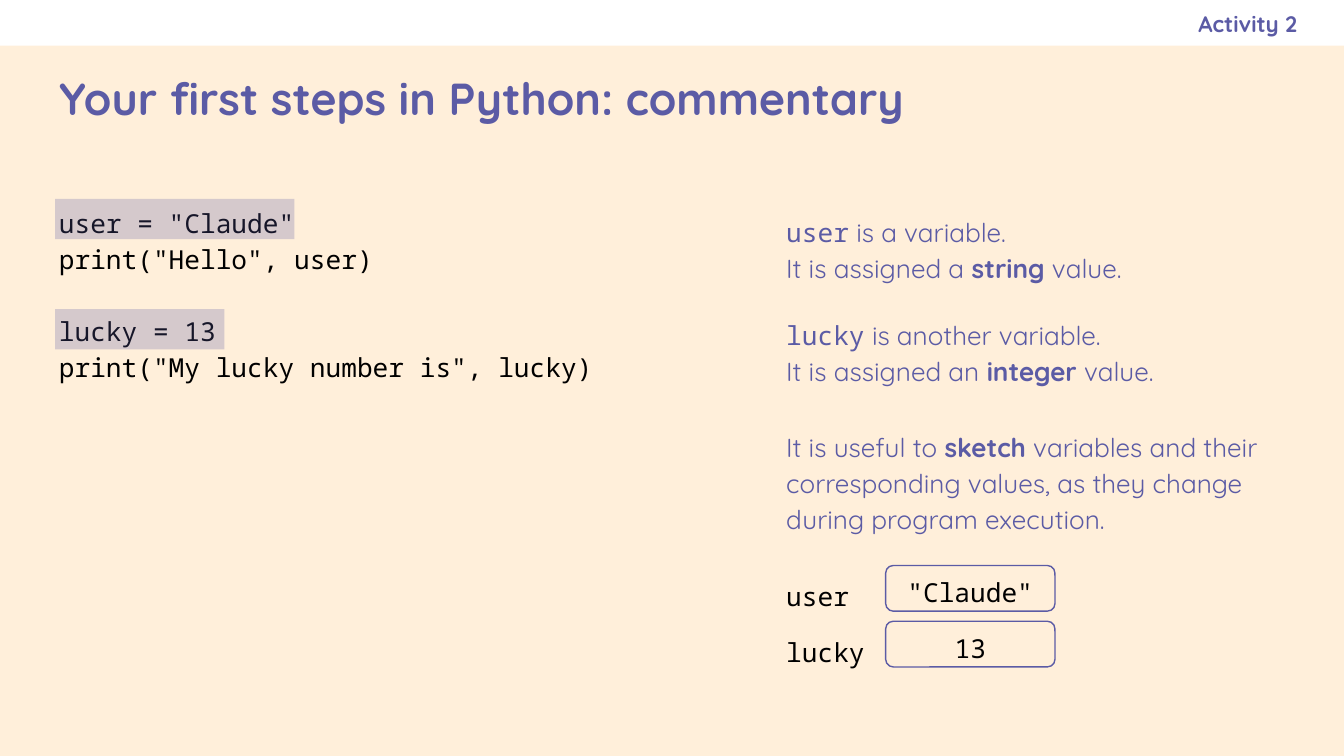
from lxml import etree
from pptx import Presentation
from pptx.dml.color import RGBColor
from pptx.enum.shapes import MSO_SHAPE as Shape
from pptx.enum.text import MSO_ANCHOR as Anchor, MSO_AUTO_SIZE as AutoSize, PP_ALIGN as Align
from pptx.oxml.ns import qn
from pptx.util import Inches, Pt

CREAM = RGBColor(0xFF, 0xEF, 0xDA)
WHITE = RGBColor(0xFF, 0xFF, 0xFF)
VIOLET = RGBColor(0x5B, 0x5B, 0xA5)
BLACK = RGBColor(0, 0, 0)
SANS = "Quicksand"
MONO = "Noto Sans Mono"
COLUMNS, ROWS = 100, 56.25
LEFT_CODE = 3.4
LEFT_NOTES = 57.52
NOTES_WIDTH = 39
BAND_HEIGHT = 3.4


class LessonSlide:
    """Places elements given in grid columns and rows as (left, top, width, height)."""

    def __init__(self, presentation):
        self.column = presentation.slide_width / COLUMNS
        self.row = presentation.slide_height / ROWS
        self.slide = presentation.slides.add_slide(presentation.slide_layouts[5])
        self.slide.background.fill.solid()
        self.slide.background.fill.fore_color.rgb = CREAM

    def place(self, box):
        left, top, width, height = box
        return (round(left * self.column), round(top * self.row),
                round(width * self.column), round(height * self.row))

    def set_frame(self, shape, anchor=Anchor.TOP, insets=(0.1, 0.1, 0.1, 0.1)):
        frame = shape.text_frame
        frame.word_wrap = True
        frame.auto_size = AutoSize.NONE
        frame.vertical_anchor = anchor
        (frame.margin_left, frame.margin_top,
         frame.margin_right, frame.margin_bottom) = map(Inches, insets)
        return frame

    def style(self, paragraph, font=SANS, size=14, color=VIOLET, bold=False,
              align=Align.LEFT, spacing=1.0):
        paragraph.alignment = align
        paragraph.line_spacing = spacing
        for run in paragraph.runs:
            run.font.name = font
            run.font.size = Pt(size)
            run.font.bold = bold
            run.font.color.rgb = color

    def title(self, text, box):
        shape = self.slide.shapes.title
        shape.left, shape.top, shape.width, shape.height = self.place(box)
        frame = self.set_frame(shape, Anchor.MIDDLE)
        frame.text = text
        self.style(frame.paragraphs[0], size=24, bold=True)

    def rectangle(self, box, color, opacity=None):
        shape = self.slide.shapes.add_shape(Shape.RECTANGLE, *self.place(box))
        shape.shadow.inherit = False
        shape.fill.solid()
        shape.fill.fore_color.rgb = color
        shape.line.fill.background()
        if opacity is not None:
            fill_color = shape.fill._xPr.find(qn("a:solidFill"))[0]
            etree.SubElement(fill_color, qn("a:alpha"), val=str(opacity * 1000))

    def label(self, text, box):
        shape = self.slide.shapes.add_textbox(*self.place(box))
        frame = self.set_frame(shape, Anchor.MIDDLE, (0.1, 0.1, 0, 0.1))
        frame.text = text
        self.style(frame.paragraphs[0], size=12, bold=True, align=Align.RIGHT)

    def code(self, blocks, box, gap=19.3):
        """Writes blocks of code lines, with one line of space between blocks."""
        frame = self.set_frame(self.slide.shapes.add_textbox(*self.place(box)))
        frame.text = "\n".join(line for block in blocks for line in block)
        for paragraph in frame.paragraphs:
            self.style(paragraph, MONO, color=BLACK, spacing=1.15)
            if paragraph.text in [block[0] for block in blocks[1:]]:
                paragraph.space_before = Pt(gap)

    def note(self, lines, box):
        """Writes lines of (text, kind) pairs, where kind is plain, bold or code."""
        shape = self.slide.shapes.add_textbox(*self.place(box))
        frame = self.set_frame(shape, insets=(0.1, 0.1, 0.06, 0.1))
        for index, pieces in enumerate(lines):
            paragraph = frame.add_paragraph() if index else frame.paragraphs[0]
            for text, _ in pieces:
                paragraph.add_run().text = text
            self.style(paragraph, spacing=1.14)
            for run, (_, kind) in zip(paragraph.runs, pieces):
                run.font.bold = kind == "bold"
                run.font.name = MONO if kind == "code" else SANS

    def variable(self, name, value, top):
        """Sketches a variable as its name beside a box with its value."""
        shapes = self.slide.shapes.add_group_shape().shapes
        name_box = shapes.add_textbox(*self.place((LEFT_NOTES, top, 8, 4)))
        value_box = shapes.add_shape(
            Shape.ROUNDED_RECTANGLE, *self.place((65.9, top + 0.25, 12.6, 3.4)))
        value_box.shadow.inherit = False
        value_box.fill.background()
        value_box.line.color.rgb = VIOLET
        value_box.line.width = Pt(0.75)
        name_frame = self.set_frame(name_box)
        value_frame = self.set_frame(value_box, Anchor.MIDDLE, (0.1, 0.02, 0.1, 0))
        for frame, text, align in ((name_frame, name, Align.LEFT),
                                   (value_frame, value, Align.CENTER)):
            frame.text = text
            self.style(frame.paragraphs[0], MONO, color=BLACK, align=align, spacing=1.15)


def main():
    presentation = Presentation()
    presentation.slide_width = Inches(10)
    presentation.slide_height = presentation.slide_width * 9 // 16
    lesson = LessonSlide(presentation)

    lesson.rectangle((0, 0, COLUMNS, BAND_HEIGHT), WHITE)
    lesson.title("Your first steps in Python: commentary", (LEFT_CODE, 3.4, 93.2, 7.7))
    lesson.label("Activity 2", (LEFT_NOTES, 0.04, NOTES_WIDTH, BAND_HEIGHT))

    lesson.code([('user = "Claude"', 'print("Hello", user)'),
                 ("lucky = 13", 'print("My lucky number is", lucky)')],
                (LEFT_CODE, 14.1, 48.4, 15.7))
    for top, width in ((14.8, 17.8), (23, 12.6)):
        lesson.rectangle((4.1, top, width, 3), VIOLET, opacity=25)

    for name, description, article, kind, top in (
            ("user", " is a variable.", "a", "string", 14.8),
            ("lucky", " is another variable.", "an", "integer", 22.44)):
        lesson.note([[(name, "code"), (description, "plain")],
                     [(f"It is assigned {article} ", "plain"), (kind, "bold"),
                      (" value.", "plain")]],
                    (LEFT_NOTES, top, NOTES_WIDTH, 6.8))
    lesson.note([[("It is useful to ", "plain"), ("sketch", "bold"),
                  (" variables and their corresponding values, "
                   "as they change during program execution.", "plain")]],
                (LEFT_NOTES, 30.8, NOTES_WIDTH, 9.4))

    for index, (name, value) in enumerate((("user", '"Claude"'), ("lucky", "13"))):
        lesson.variable(name, value, 41.83 + 4.15 * index)

    presentation.save("out.pptx")


if __name__ == "__main__":
    main()
